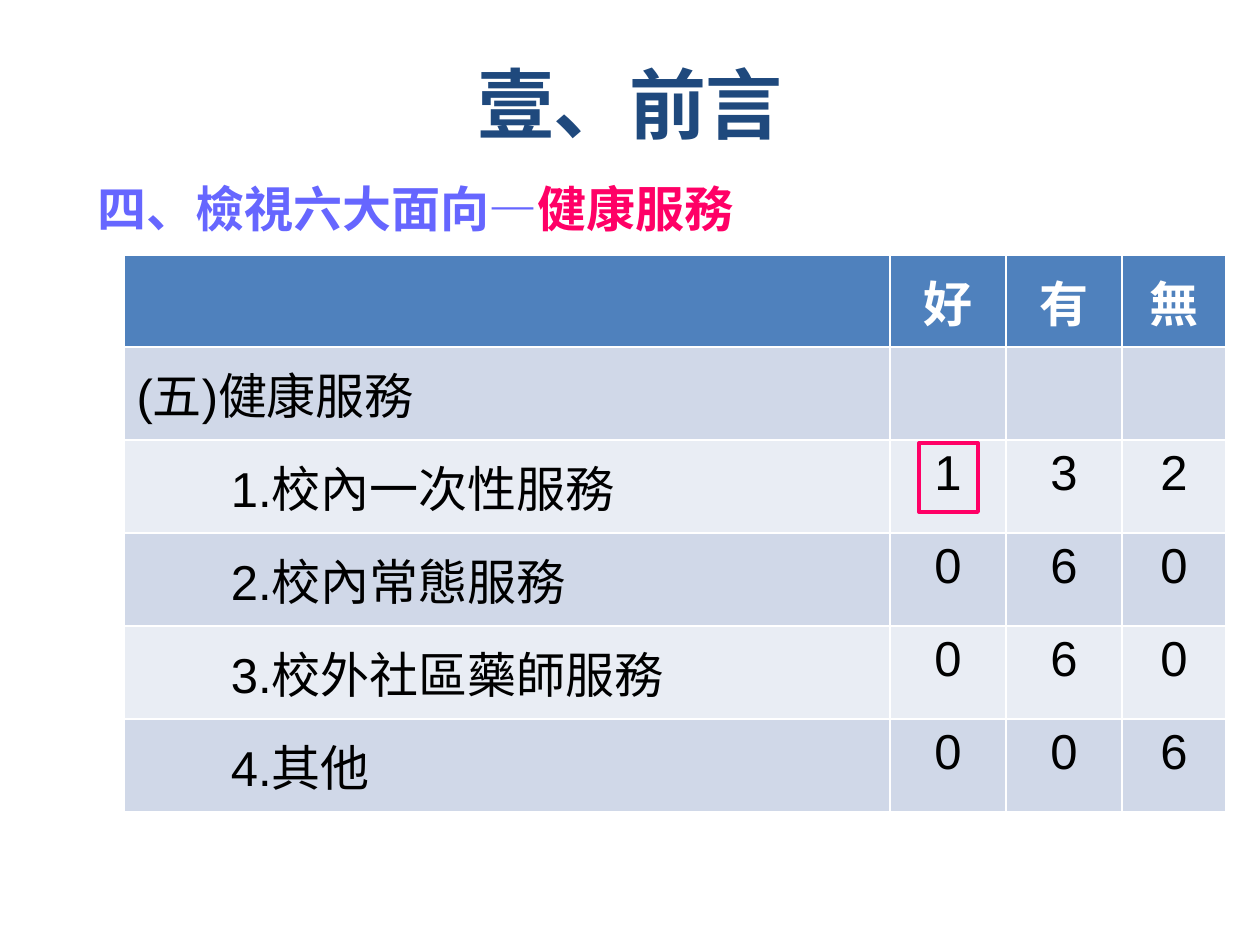
from lxml import etree
from pptx import Presentation
from pptx.dml.color import RGBColor
from pptx.enum.shapes import MSO_SHAPE
from pptx.enum.text import MSO_ANCHOR, PP_ALIGN
from pptx.oxml.ns import qn
from pptx.util import Pt

PX = 914400 / 126
LEFT, CENTER = PP_ALIGN.LEFT, PP_ALIGN.CENTER
TOP, MIDDLE, BOTTOM = MSO_ANCHOR.TOP, MSO_ANCHOR.MIDDLE, MSO_ANCHOR.BOTTOM
RECT = MSO_SHAPE.RECTANGLE

COLORS = {
    "title": "1F497D", "topic": "6666FF", "accent": "FF0066",
    "header": "4F81BD", "odd": "D0D8E8", "even": "E9EDF4",
    "white": "FFFFFF", "text": "000000",
}
HEADER = ["", "好", "有", "無"]
ROWS = [
    ["(五)健康服務", "", "", ""],
    ["1.校內一次性服務", "1", "3", "2"],
    ["2.校內常態服務", "0", "6", "0"],
    ["3.校外社區藥師服務", "0", "6", "0"],
    ["4.其他", "0", "0", "6"],
]


def emu(px):
    return round(px * PX)


def rgb(name):
    return RGBColor.from_string(COLORS[name])


class SlideBuilder:
    heading_font = "Times New Roman"
    table_font = "Arial"
    size = 28
    item_indent = 107

    def __init__(self, prs):
        self.s = prs.slides.add_slide(prs.slide_layouts[1])

    def run(self, p, text, color, font, size=size, bold=False):
        r = p.add_run()
        r.text = text
        r.font.name, r.font.size, r.font.bold = font, Pt(size), bold
        r.font.color.rgb = rgb(color)
        return r

    def place(self, sp, x, y, w, h):
        sp.left, sp.top, sp.width, sp.height = map(emu, (x, y, w, h))

    def title(self, text, *box):
        sp = self.s.shapes.title
        self.place(sp, *box)
        tf = sp.text_frame
        tf.vertical_anchor = BOTTOM
        p = tf.paragraphs[0]
        p.alignment = CENTER
        r = self.run(p, text, "title", self.heading_font, 44, True)
        r._r.get_or_add_rPr().set("spc", "-60")

    def body(self, parts, *box):
        sp = self.s.placeholders[1]
        self.place(sp, *box)
        p = sp.text_frame.paragraphs[0]
        p.line_spacing = 1.3
        p.space_before = Pt(0)
        pPr = p._p.get_or_add_pPr()
        pPr.set("marL", "0")
        pPr.set("indent", "0")
        etree.SubElement(pPr, qn("a:buNone"))
        for text, color in parts:
            self.run(p, text, color, self.heading_font, bold=True)

    def cell(self, cell, text, fill, color, align, anchor, bold):
        cell.fill.solid()
        cell.fill.fore_color.rgb = rgb(fill)
        cell.vertical_anchor = anchor
        p = cell.text_frame.paragraphs[0]
        p.alignment = align
        if text:
            self.run(p, text, color, self.table_font, bold=bold)

    def table(self, header, rows, x, y, widths, heights):
        frame = self.s.shapes.add_table(
            len(heights), len(widths), emu(x), emu(y),
            emu(sum(widths)), emu(sum(heights)))
        tbl = frame.table
        for col, w in zip(tbl.columns, widths):
            col.width = emu(w)
        for row, h in zip(tbl.rows, heights):
            row.height = emu(h)
        for j, text in enumerate(header):
            self.cell(tbl.cell(0, j), text, "header", "white", CENTER, MIDDLE, True)
        for i, row in enumerate(rows, 1):
            fill = "odd" if i % 2 else "even"
            for j, text in enumerate(row):
                align, anchor = (CENTER, TOP) if j else (LEFT, MIDDLE)
                self.cell(tbl.cell(i, j), text, fill, "text", align, anchor, False)
            if i > 1:
                tbl.cell(i, 0).margin_left = emu(self.item_indent)

    def outline(self, color, *box):
        sp = self.s.shapes.add_shape(RECT, *map(emu, box))
        sp.shadow.inherit = False
        sp.fill.background()
        sp.line.color.rgb = rgb(color)
        sp.line.width = Pt(2.25)


def main():
    prs = Presentation()
    prs.slide_width, prs.slide_height = emu(1260), emu(945)
    b = SlideBuilder(prs)
    b.title("壹、前言", 35, 40, 1190, 115)
    b.body([("四、檢視六大面向—", "topic"), ("健康服務", "accent")], 85, 155, 963, 100)
    b.table(HEADER, ROWS, 124, 255, [766, 116, 116, 104], [92] + [93] * len(ROWS))
    b.outline("accent", 919, 443, 59, 69)
    prs.save("out.pptx")


if __name__ == "__main__":
    main()
